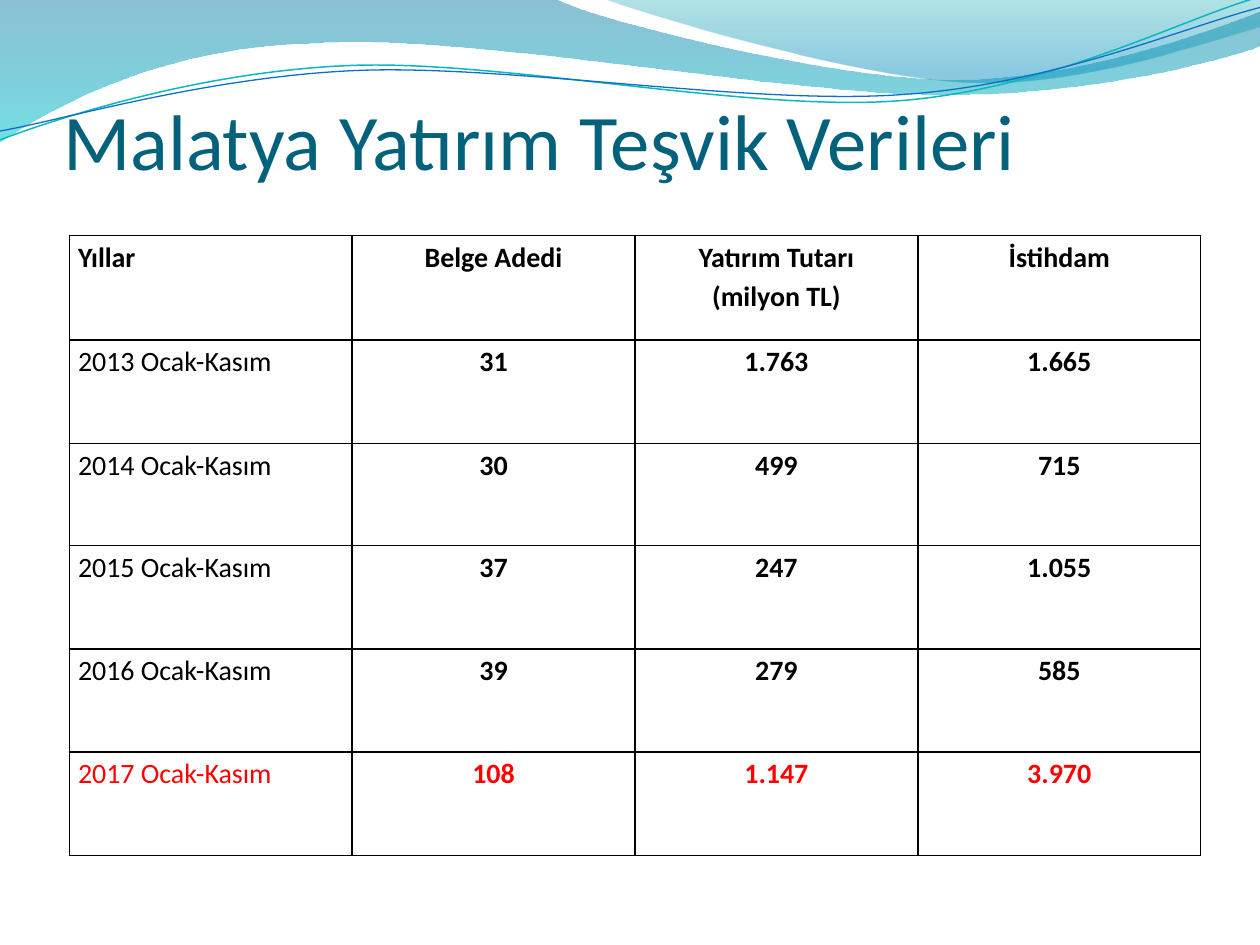
from dataclasses import dataclass
from math import cos, radians, sin

from pptx import Presentation
from pptx.dml.color import RGBColor
from pptx.enum.text import MSO_ANCHOR as Anchor, PP_ALIGN as Align
from pptx.oxml.ns import qn
from pptx.util import Inches, Pt
from lxml.etree import SubElement

FONT = "Calibri"

Point = tuple[float, float]


@dataclass
class Stop:
    position: float
    color: str
    opacity: int


@dataclass
class Wave:
    """Each segment holds one point for a line, or three for a Bézier curve."""
    start: Point
    segments: list[list[Point]]
    stops: tuple[Stop, ...] = ()
    line_color: str = ""
    line_width: float = 0
    rotation: float = 0
    center: Point = (0, 0)


WAVES = [
    Wave((0, 0), [
        [(4.4, -0.01)],
        [(4.76, 0.17), (6.64, 0.63), (7.58, 0.63)],
        [(8.53, 0.63), (9.58, 0.26), (10, 0.09)],
        [(10.01, 0.36)],
        [(9.83, 0.44), (8.7, 0.76), (7.46, 0.75)],
        [(6.22, 0.75), (3.82, 0.28), (2.57, 0.34)],
        [(1.29, 0.36), (0.46, 0.83), (-0.01, 1.13)],
        [(0, 0)],
    ], stops=(Stop(0, "0074A1", 45), Stop(1, "00C6CF", 55))),
    Wave((4.79, -0.01), [
        [(5.09, 0.11), (6.82, 0.62), (7.69, 0.65)],
        [(8.56, 0.69), (9.61, 0.32), (10, 0.21)],
        [(10, 0)],
        [(4.79, -0.01)],
    ], stops=(Stop(0, "00A1A9", 30), Stop(0.8, "008BBF", 45))),
    Wave((0, 1.11), [
        [(0.48, 0.93), (1.58, 0.57), (2.77, 0.52)],
        [(3.95, 0.47), (5.93, 0.89), (7.13, 0.8)],
        [(8.33, 0.71), (9.38, 0.15), (9.98, -0.02)],
    ], line_color="0AB8BF", line_width=0.85, rotation=-2.7, center=(4.99, 0.58)),
    Wave((0, 1.04), [
        [(0.47, 0.96), (1.64, 0.61), (2.83, 0.56)],
        [(4.03, 0.51), (5.97, 0.84), (7.17, 0.75)],
        [(8.36, 0.67), (9.41, 0.21), (10, 0.06)],
    ], line_color="0F6FC6", line_width=0.75, rotation=-2.7, center=(5, 0.59)),
]

ROWS = [
    ("Yıllar", "Belge Adedi", "Yatırım Tutarı\n(milyon TL)", "İstihdam"),
    ("2013 Ocak-Kasım", "31", "1.763", "1.665"),
    ("2014 Ocak-Kasım", "30", "499", "715"),
    ("2015 Ocak-Kasım", "37", "247", "1.055"),
    ("2016 Ocak-Kasım", "39", "279", "585"),
    ("2017 Ocak-Kasım", "108", "1.147", "3.970"),
]
ROW_HEIGHTS = (0.83, 0.82, 0.81, 0.82, 0.82, 0.82)


def rgb(color: str) -> RGBColor:
    return RGBColor.from_string(color)


def place(wave: Wave, point: Point) -> tuple[int, int]:
    """Give the point's position before the wave's rotation is applied."""
    angle = radians(-wave.rotation)
    center_x, center_y = wave.center
    x, y = point[0] - center_x, point[1] - center_y
    return (Inches(center_x + x * cos(angle) - y * sin(angle)),
            Inches(center_y + x * sin(angle) + y * cos(angle)))


def bend(shape, segments: list[list[Point]]) -> None:
    """Join each run of three straight pieces into one Bézier curve."""
    lines = iter(list(shape._element.iter(qn("a:lnTo"))))
    for segment in segments:
        pieces = [next(lines) for _ in segment]
        if len(pieces) == 1:
            continue
        curve = SubElement(pieces[0].getparent(), qn("a:cubicBezTo"))
        pieces[0].addprevious(curve)
        for piece in pieces:
            curve.append(piece[0])
            piece.getparent().remove(piece)


def draw_wave(page, wave: Wave) -> None:
    builder = page.shapes.build_freeform(*place(wave, wave.start))
    points = [place(wave, point) for segment in wave.segments for point in segment]
    builder.add_line_segments(points, close=bool(wave.stops))
    shape = builder.convert_to_shape()
    bend(shape, wave.segments)
    shape.rotation = wave.rotation
    shape.shadow.inherit = False
    if not wave.stops:
        shape.fill.background()
        shape.line.color.rgb = rgb(wave.line_color)
        shape.line.width = Pt(wave.line_width)
        return
    shape.line.fill.background()
    shape.fill.gradient()
    shape.fill.gradient_angle = 270
    for target, stop in zip(shape.fill.gradient_stops, wave.stops):
        target.position = stop.position
        target.color.rgb = rgb(stop.color)
    colors = shape._element.spPr.iter(qn("a:srgbClr"))
    for color, stop in zip(colors, wave.stops):
        SubElement(color, qn("a:alpha"), val=str(stop.opacity * 1000))


def add_title(page, text: str) -> None:
    title = page.shapes.title
    title.left, title.top = Inches(0.5), Inches(0.77)
    title.width, title.height = Inches(9.08), Inches(0.71)
    frame = title.text_frame
    frame.text = text
    frame.vertical_anchor = Anchor.BOTTOM
    frame.margin_left = frame.margin_right = frame.margin_bottom = 0
    frame.margin_top = Inches(0.05)
    para = frame.paragraphs[0]
    para.alignment = Align.LEFT
    para.font.name, para.font.size = FONT, Pt(45)
    para.font.color.rgb = rgb("04617B")
    page.shapes._spTree.append(title._element)  # in front of the waves


def set_borders(cell, color: str, width: float) -> None:
    properties = cell._tc.get_or_add_tcPr()
    for side in ("lnL", "lnR", "lnT", "lnB"):
        line = SubElement(properties, qn(f"a:{side}"), w=str(Pt(width)))
        fill = SubElement(line, qn("a:solidFill"))
        SubElement(fill, qn("a:srgbClr"), val=color)


def fill_cell(cell, text: str, color: str, bold: bool, align: Align) -> None:
    cell.text = text
    cell.vertical_anchor = Anchor.TOP
    cell.margin_left = cell.margin_right = Inches(0.07)
    cell.margin_top = cell.margin_bottom = 0
    set_borders(cell, "000000", 1)
    cell.fill.background()
    for para in cell.text_frame.paragraphs:
        para.alignment = align
        para.line_spacing = 1.15
        para.font.name, para.font.size, para.font.bold = FONT, Pt(16), bold
        para.font.color.rgb = rgb(color)


def add_incentive_table(page) -> None:
    table = page.shapes.add_table(len(ROWS), len(ROWS[0]), Inches(0.55), Inches(1.87),
                                  Inches(8.98), Inches(sum(ROW_HEIGHTS))).table
    table.first_row = table.horz_banding = False
    for row, texts in enumerate(ROWS):
        table.rows[row].height = Inches(ROW_HEIGHTS[row])
        color = "FF0000" if row == len(ROWS) - 1 else "000000"
        for column, text in enumerate(texts):
            fill_cell(table.cell(row, column), text, color,
                      bold=row == 0 or column > 0,
                      align=Align.CENTER if column else Align.LEFT)


def main() -> None:
    deck = Presentation()
    deck.slide_width, deck.slide_height = Inches(10), Inches(7.5)
    page = deck.slides.add_slide(deck.slide_layouts[5])
    for wave in WAVES:
        draw_wave(page, wave)
    add_title(page, "Malatya Yatırım Teşvik Verileri")
    add_incentive_table(page)
    deck.save("out.pptx")


if __name__ == "__main__":
    main()
